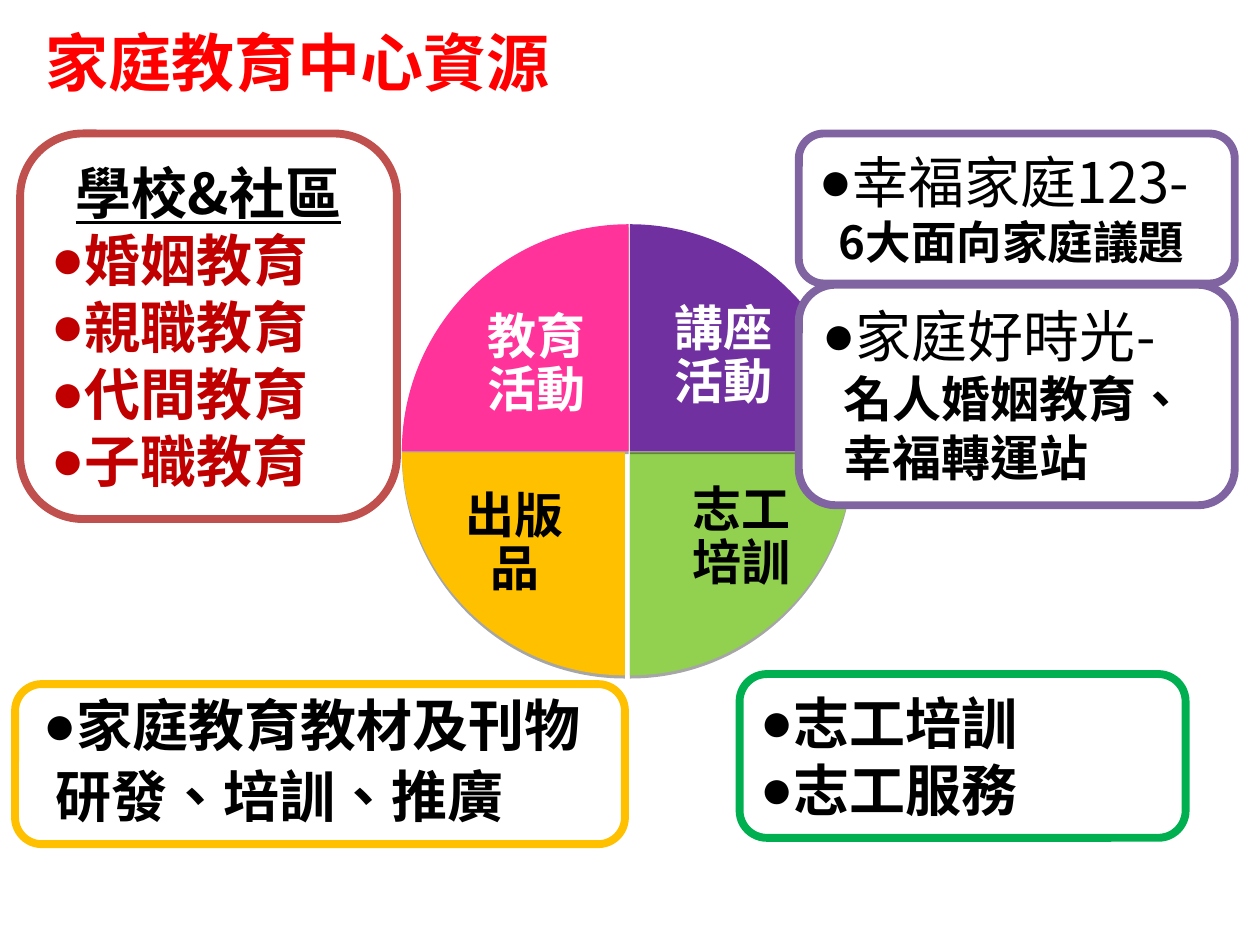
from lxml import etree
from pptx import Presentation
from pptx.dml.color import RGBColor
from pptx.enum import shapes, text
from pptx.oxml import parse_xml
from pptx.oxml.ns import nsdecls, qn
from pptx.util import Inches, Pt

FONT = "Noto Sans CJK SC"


def color(value):
    return RGBColor.from_string(value)


def add_run(paragraph, words, size, fill, bold=True, underline=False):
    run = paragraph.add_run()
    run.text = words
    run.font.size = Pt(size)
    run.font.bold = bold
    run.font.underline = underline
    run.font.color.rgb = color(fill)
    run.font.name = FONT
    properties = run.font._element
    properties.set("lang", "zh-TW")
    etree.SubElement(properties, qn("a:ea")).set("typeface", FONT)


presentation = Presentation()
presentation.slide_width = Inches(10)
presentation.slide_height = Inches(7.5)
slide = presentation.slides.add_slide(presentation.slide_layouts[5])

# Title
title = slide.shapes.title
title.left, title.top = Inches(0.16), Inches(0.14)
title.width, title.height = Inches(4.4), Inches(0.71)
frame = title.text_frame
frame.auto_size = text.MSO_AUTO_SIZE.NONE
frame.vertical_anchor = text.MSO_ANCHOR.TOP
frame.paragraphs[0].alignment = text.PP_ALIGN.CENTER
add_run(frame.paragraphs[0], "家庭教育中心資源", 36, "FF0000")

# Quarter circles: corner x, corner y, radius, direction x, direction y, fill
CURVE = 0.55
quarters = [
    (5, 3.59, 1.77, 1, 1, "92D050"),
    (4.99, 3.58, 1.8, -1, -1, "FF3399"),
    (4.96, 3.59, 1.77, -1, 1, "FFC000"),
    (5, 3.58, 1.8, 1, -1, "7030A0"),
]
for x, y, radius, across, down, fill in quarters:
    start, *rest = [
        (Inches(x + across * radius * i), Inches(y + down * radius * j))
        for i, j in ((1, 0), (1, CURVE), (CURVE, 1), (0, 1), (0, 0))]
    builder = slide.shapes.build_freeform(*start)
    builder.add_line_segments(rest, close=True)
    shape = builder.convert_to_shape()
    # Turn the first three segments into one curve
    segments = list(shape._element.spPr.iter(qn("a:lnTo")))[:3]
    curve = etree.Element(qn("a:cubicBezTo"))
    segments[0].addprevious(curve)
    for segment in segments:
        curve.append(segment[0])
        segment.getparent().remove(segment)
    shape.fill.solid()
    shape.fill.fore_color.rgb = color(fill)
    shape.line.fill.background()
    shape._element.spPr.append(parse_xml(
        f'<a:effectLst {nsdecls("a")}><a:outerShdw blurRad="0" dist="22860" '
        'dir="5400000" rotWithShape="0"><a:srgbClr val="000000">'
        '<a:alpha val="35000"/></a:srgbClr></a:outerShdw></a:effectLst>'))

# Quarter labels
labels = [
    ("志工培訓", 5.27, 3.74, 1.23, 1.06, "000000"),
    ("教育活動", 3.62, 2.26, 1.27, 1.27, "FFFFFF"),
    ("出版品", 3.46, 3.69, 1.25, 1.25, "000000"),
    ("講座活動", 5.11, 2.2, 1.27, 1.27, "FFFFFF"),
]
for words, left, top, width, height, fill in labels:
    frame = slide.shapes.add_textbox(
        Inches(left), Inches(top), Inches(width), Inches(height)).text_frame
    frame.word_wrap = True
    frame.vertical_anchor = text.MSO_ANCHOR.MIDDLE
    frame.margin_left = frame.margin_right = Inches(0.22)
    frame.margin_top = frame.margin_bottom = Inches(0.22)
    paragraph = frame.paragraphs[0]
    paragraph.alignment = text.PP_ALIGN.CENTER
    paragraph.line_spacing = 0.9
    paragraph.space_after = Pt(12)
    add_run(paragraph, words, 28, fill)

# Resource boxes: place, outline, line spacing, space after,
# then lines of (kind, words, size, colour, bold, left margin)
RED, BLACK = "C00000", "000000"
boxes = [
    (0.16, 1.06, 2.99, 3.06, "C0504D", 1, 0,
     [("heading", "學校&社區", 32, BLACK, True, 0)]
     + [("bullet", words, 32, RED, True, 0)
        for words in ("婚姻教育", "親職教育", "代間教育", "子職教育")]),
    (0.12, 5.43, 4.84, 1.27, "FFC000", 0.9, 6,
     [("bullet", "家庭教育教材及刊物", 32, BLACK, True, 0.06),
      ("plain", "研發、培訓、推廣", 32, BLACK, True, 0.16)]),
    (5.87, 5.35, 3.54, 1.3, "00B050", 1, 0,
     [("bullet", "志工培訓", 32, BLACK, True, 0),
      ("bullet", "志工服務", 32, BLACK, True, 0)]),
    (6.34, 1.06, 3.46, 1.19, "8064A2", 1, 0,
     [("bullet", "幸福家庭123-", 32, BLACK, False, 0),
      ("plain", "6大面向家庭議題", 26, BLACK, True, 0.16)]),
    (6.34, 2.26, 3.46, 1.75, "8064A2", 1, 0,
     [("bullet", "家庭好時光-", 32, BLACK, False, 0),
      ("plain", "名人婚姻教育、", 28, BLACK, True, 0.17),
      ("plain", "幸福轉運站", 28, BLACK, True, 0.17)]),
]
for left, top, width, height, outline, spacing, after, lines in boxes:
    shape = slide.shapes.add_shape(
        shapes.MSO_SHAPE.ROUNDED_RECTANGLE,
        Inches(left), Inches(top), Inches(width), Inches(height))
    shape.shadow.inherit = False
    shape.fill.solid()
    shape.fill.fore_color.rgb = color("FFFFFF")
    shape.line.color.rgb = color(outline)
    shape.line.width = Pt(4.5)
    frame = shape.text_frame
    frame.word_wrap = True
    frame.vertical_anchor = text.MSO_ANCHOR.TOP
    for index, (kind, words, size, fill, bold, margin) in enumerate(lines):
        paragraph = frame.add_paragraph() if index else frame.paragraphs[0]
        heading = kind == "heading"
        paragraph.alignment = (
            text.PP_ALIGN.CENTER if heading else text.PP_ALIGN.LEFT)
        paragraph.line_spacing = float(spacing)
        paragraph.space_after = Pt(after)
        properties = paragraph._element.get_or_add_pPr()
        properties.set("marL", str(Inches(margin)))
        properties.set("indent", "0")
        if kind == "bullet":
            etree.SubElement(properties, qn("a:buFont")).set("typeface", "Arial")
            etree.SubElement(properties, qn("a:buChar")).set("char", "●")
        add_run(paragraph, words, size, fill, bold, heading)

presentation.save("out.pptx")
